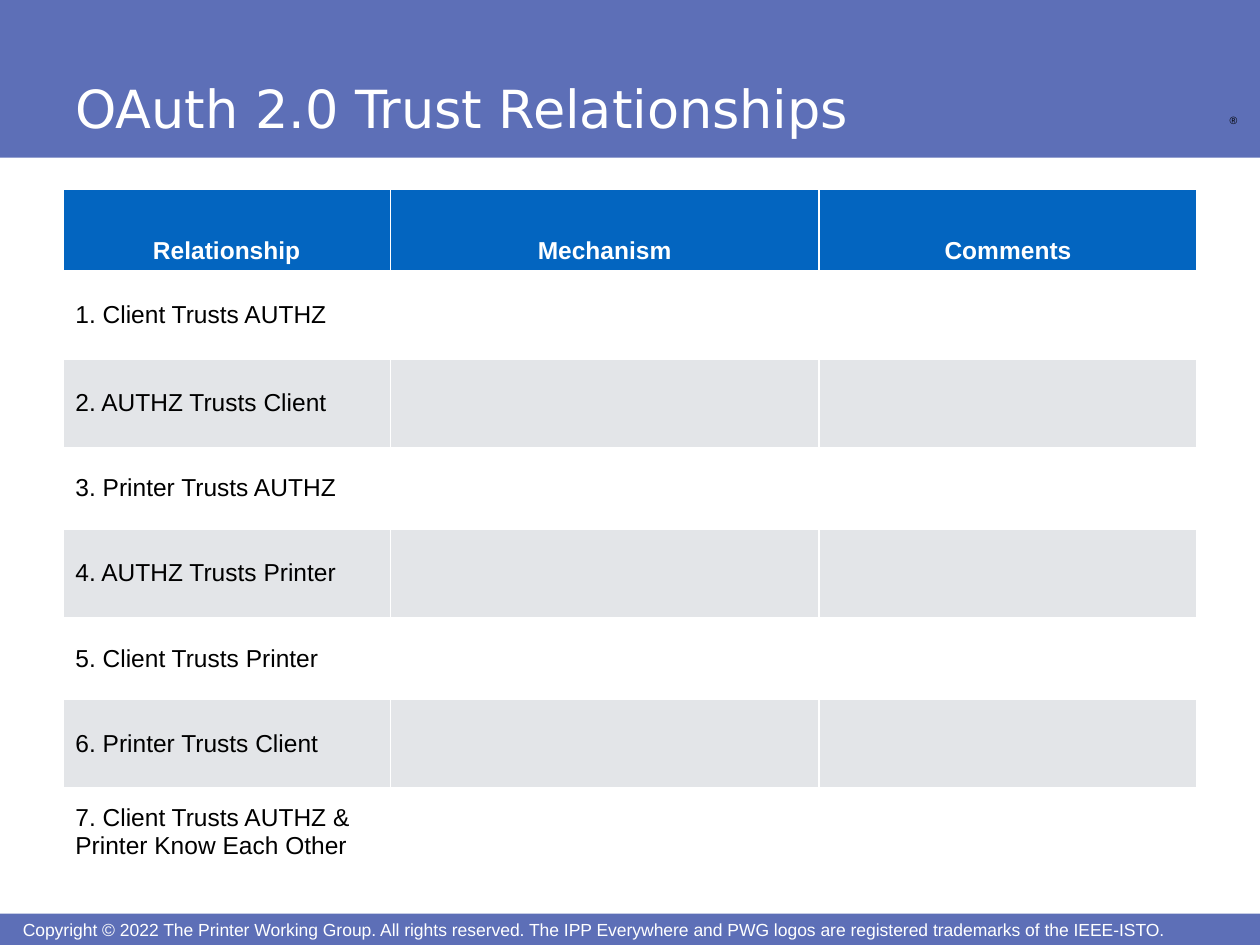
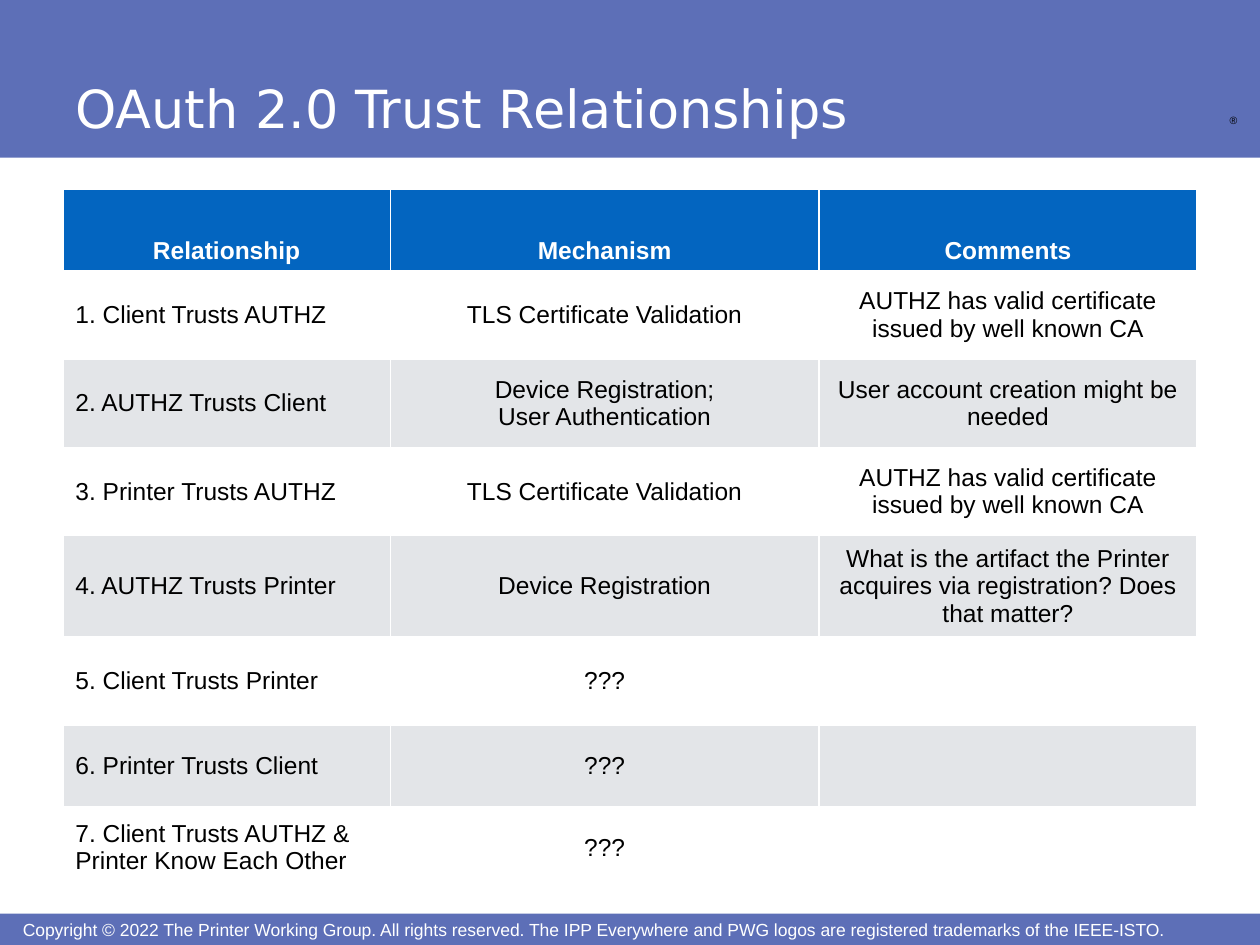
from pptx import Presentation
from pptx.dml.color import RGBColor
from pptx.enum.shapes import MSO_SHAPE as Shape
from pptx.enum.text import MSO_ANCHOR as Anchor, PP_ALIGN as Align
from pptx.util import Cm, Pt

COLOURS = {
    "band": "5D6FB7",
    "header": "0365C0",
    "stripe": "E3E5E8",
    "white": "FFFFFF",
    "black": "000000",
}
TITLE = "OAuth 2.0 Trust Relationships"
COPYRIGHT = (
    "Copyright © 2022 The Printer Working Group. All rights reserved. "
    "The IPP Everywhere and PWG logos are registered trademarks of the IEEE-ISTO."
)
BANDS = [(0, 3.18), (18.42, 0.63)]
LABELS = [
    ("®", (24.49, 2.18, 0.69, 0.48), (0.3, 0.15), Anchor.TOP, 6, "Arial", "black"),
    (COPYRIGHT, (0.36, 18.52, 23.75, 0.43), (0.1, 0), Anchor.MIDDLE, 10, "Arial", "white"),
    (TITLE, (1.27, 0.13, 21.03, 2.82), (0.25, 0.15), Anchor.BOTTOM, 30, "DejaVu Sans", "white"),
]

HEADINGS = ["Relationship", "Mechanism", "Comments"]
COLUMN_WIDTHS = [6.6, 8.64, 7.62]
SHORT, TALL = 1.65, 1.78
RELATIONSHIPS = [
    "1. Client Trusts AUTHZ",
    "2. AUTHZ Trusts Client",
    "3. Printer Trusts AUTHZ",
    "4. AUTHZ Trusts Printer",
    "5. Client Trusts Printer",
    "6. Printer Trusts Client",
    "7. Client Trusts AUTHZ & Printer Know Each Other",
]
VALID_CERTIFICATE = (
    "TLS Certificate Validation",
    "AUTHZ has valid certificate issued by well known CA",
)
UNKNOWN = ("???", "")
ANSWERS = [
    VALID_CERTIFICATE,
    ("Device Registration;\vUser Authentication", "User account creation might be needed"),
    VALID_CERTIFICATE,
    (
        "Device Registration",
        "What is the artifact the Printer acquires via registration? Does that matter?",
    ),
    UNKNOWN,
    UNKNOWN,
    UNKNOWN,
]
VERSIONS = [
    ([("", "")] * len(RELATIONSHIPS), {0, 3, 5}),
    (ANSWERS, {0, 6, 7}),
]


def rgb(name):
    return RGBColor.from_string(COLOURS[name])


def style(paragraph, size, font_name, colour, bold=False, align=Align.LEFT):
    paragraph.alignment = align
    for part in [paragraph, *paragraph.runs]:
        part.font.size = Pt(size)
        part.font.name = font_name
        part.font.bold = bold
        part.font.color.rgb = rgb(colour)


deck = Presentation()
deck.slide_width, deck.slide_height = Cm(25.4), Cm(19.05)

for answers, short_rows in VERSIONS:
    slide = deck.slides.add_slide(deck.slide_layouts[6])

    for top, height in BANDS:
        band = slide.shapes.add_shape(Shape.RECTANGLE, 0, Cm(top), deck.slide_width, Cm(height))
        band.shadow.inherit = False
        band.fill.solid()
        band.fill.fore_color.rgb = rgb("band")
        band.line.fill.background()

    for text, place, (side, edge), anchor, size, font_name, colour in LABELS:
        frame = slide.shapes.add_textbox(*map(Cm, place)).text_frame
        frame.word_wrap = True
        frame.margin_left, frame.margin_right = Cm(side), Cm(edge)
        frame.margin_top = frame.margin_bottom = Cm(edge)
        frame.vertical_anchor = anchor
        frame.text = text
        style(frame.paragraphs[0], size, font_name, colour)

    rows = [HEADINGS] + [[name, *answer] for name, answer in zip(RELATIONSHIPS, answers)]
    heights = [SHORT if index in short_rows else TALL for index in range(len(rows))]
    trust = slide.shapes.add_table(
        len(rows), len(HEADINGS), Cm(1.27), Cm(3.81), Cm(sum(COLUMN_WIDTHS)), Cm(sum(heights))
    ).table
    for column, width in zip(trust.columns, COLUMN_WIDTHS):
        column.width = Cm(width)

    for row_index, (entries, height) in enumerate(zip(rows, heights)):
        trust.rows[row_index].height = Cm(height)
        is_header = row_index == 0
        fill = "header" if is_header else ("stripe", "white")[row_index % 2]
        for column_index, entry in enumerate(entries):
            cell = trust.cell(row_index, column_index)
            cell.fill.solid()
            cell.fill.fore_color.rgb = rgb(fill)
            cell.vertical_anchor = Anchor.BOTTOM if is_header else Anchor.MIDDLE
            cell.text_frame.text = entry
            align = Align.CENTER if is_header or column_index else Align.LEFT
            colour = "white" if is_header else "black"
            style(cell.text_frame.paragraphs[0], 14, "Arial", colour, is_header, align)

    for line in trust.iter_cells():
        line.margin_left = line.margin_right = Cm(0.25)

deck.save("out.pptx")
